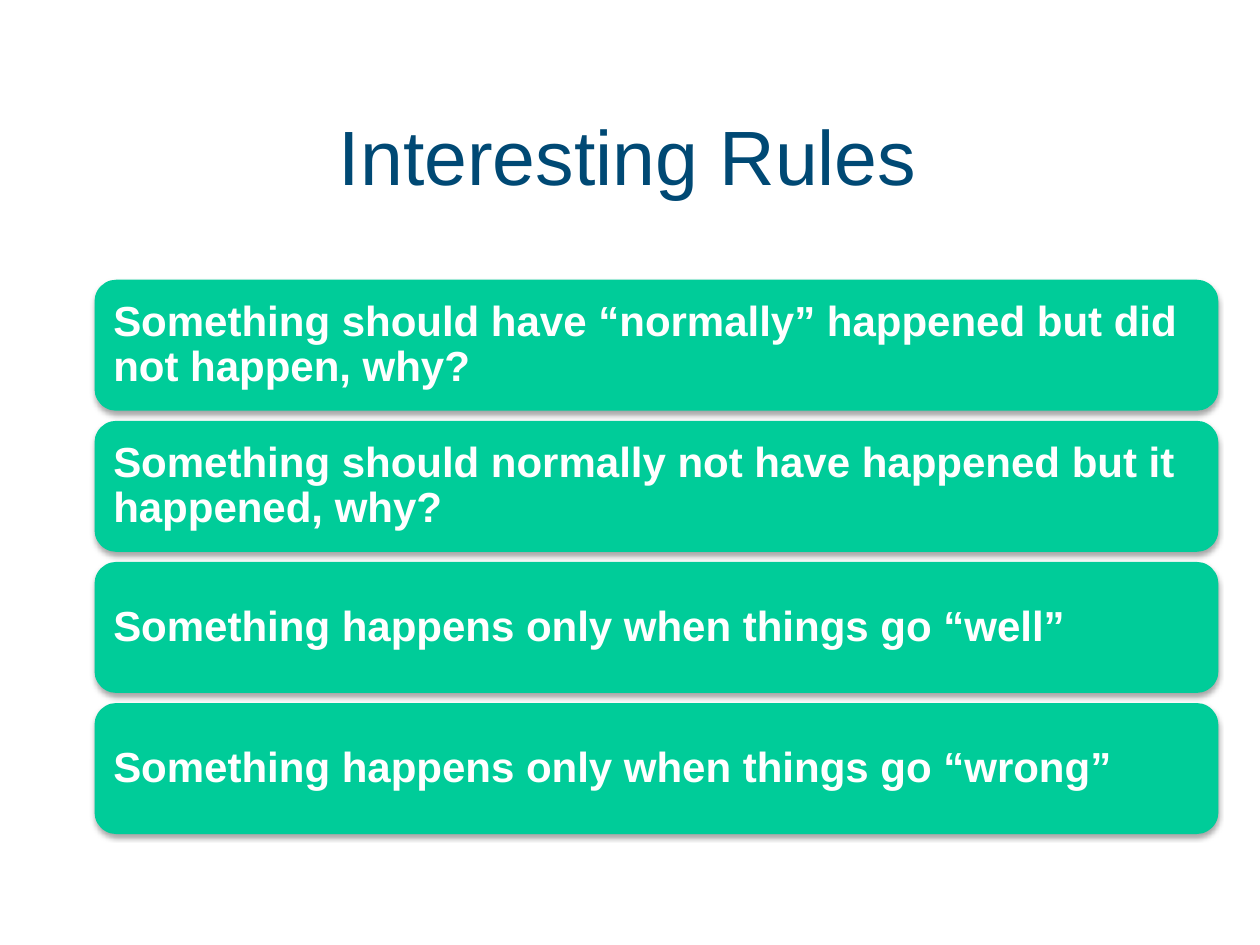
from dataclasses import dataclass

from lxml import etree
from pptx import Presentation
from pptx import util as u
from pptx.dml.color import RGBColor
from pptx.enum import shapes, text
from pptx.oxml import ns


@dataclass(frozen=True)
class Theme:
    font: str = "Arial"
    heading: RGBColor = RGBColor.from_string("004974")
    card: RGBColor = RGBColor.from_string("00CC99")
    card_text: RGBColor = RGBColor.from_string("FFFFFF")
    shadow: str = "000000"
    heading_size: u.Pt = u.Pt(44)
    card_size: u.Pt = u.Pt(24)


THEME = Theme()
HEADING = "Interesting Rules"
RULES = [
    "Something should have “normally” happened but did not happen, why?",
    "Something should normally not have happened but it happened, why?",
    "Something happens only when things go “well”",
    "Something happens only when things go “wrong”",
]


def apply(target, formats):
    for name, value in formats.items():
        setattr(target, name, value)


def write(frame, wording, color, size, bold, paragraph_formats):
    apply(frame, {"word_wrap": True, "vertical_anchor": text.MSO_ANCHOR.MIDDLE})
    paragraph = frame.paragraphs[0]
    apply(paragraph, paragraph_formats)
    run = paragraph.add_run()
    run.text = wording
    apply(run.font, {"name": THEME.font, "size": size, "bold": bold})
    run.font.color.rgb = color


def add_soft_shadow(card):
    card.shadow.inherit = False
    effects = card._element.spPr.find(ns.qn("a:effectLst"))
    shadow = etree.SubElement(
        effects, ns.qn("a:outerShdw"), blurRad=str(u.Pt(3.1)), dist=str(u.Pt(1.8)),
        dir="5400000", rotWithShape="0")
    color = etree.SubElement(shadow, ns.qn("a:srgbClr"), val=THEME.shadow)
    etree.SubElement(color, ns.qn("a:alpha"), val="35000")


def place_heading(slide, left, top, width, height):
    heading = slide.shapes.title
    apply(heading, {"left": left, "top": top, "width": width, "height": height})
    write(heading.text_frame, HEADING, THEME.heading, THEME.heading_size, False,
          {"alignment": text.PP_ALIGN.CENTER})


def place_rules(slide, left, top, width, height):
    gap = u.Inches(0.08)
    card_height = (height - gap * (len(RULES) - 1)) // len(RULES)
    for index, rule in enumerate(RULES):
        card = slide.shapes.add_shape(
            shapes.MSO_SHAPE.ROUNDED_RECTANGLE,
            left, top + index * (card_height + gap), width, card_height)
        card.fill.solid()
        card.fill.fore_color.rgb = THEME.card
        card.line.fill.background()
        add_soft_shadow(card)
        sides = ("left", "top", "right", "bottom")
        apply(card.text_frame, {f"margin_{side}": u.Inches(0.1) for side in sides})
        write(card.text_frame, rule, THEME.card_text, THEME.card_size, True,
              {"alignment": text.PP_ALIGN.LEFT, "line_spacing": 0.9})


def main():
    deck = Presentation()
    apply(deck, {"slide_width": u.Inches(10), "slide_height": u.Inches(7.5)})
    slide = deck.slides.add_slide(deck.slide_layouts.get_by_name("Title Only"))
    place_heading(slide, u.Inches(0.83), u.Inches(0.8), u.Inches(8.31), u.Inches(0.86))
    place_rules(slide, u.Inches(0.75), u.Inches(2.22), u.Inches(8.92), u.Inches(4.4))
    deck.save("out.pptx")


if __name__ == "__main__":
    main()
